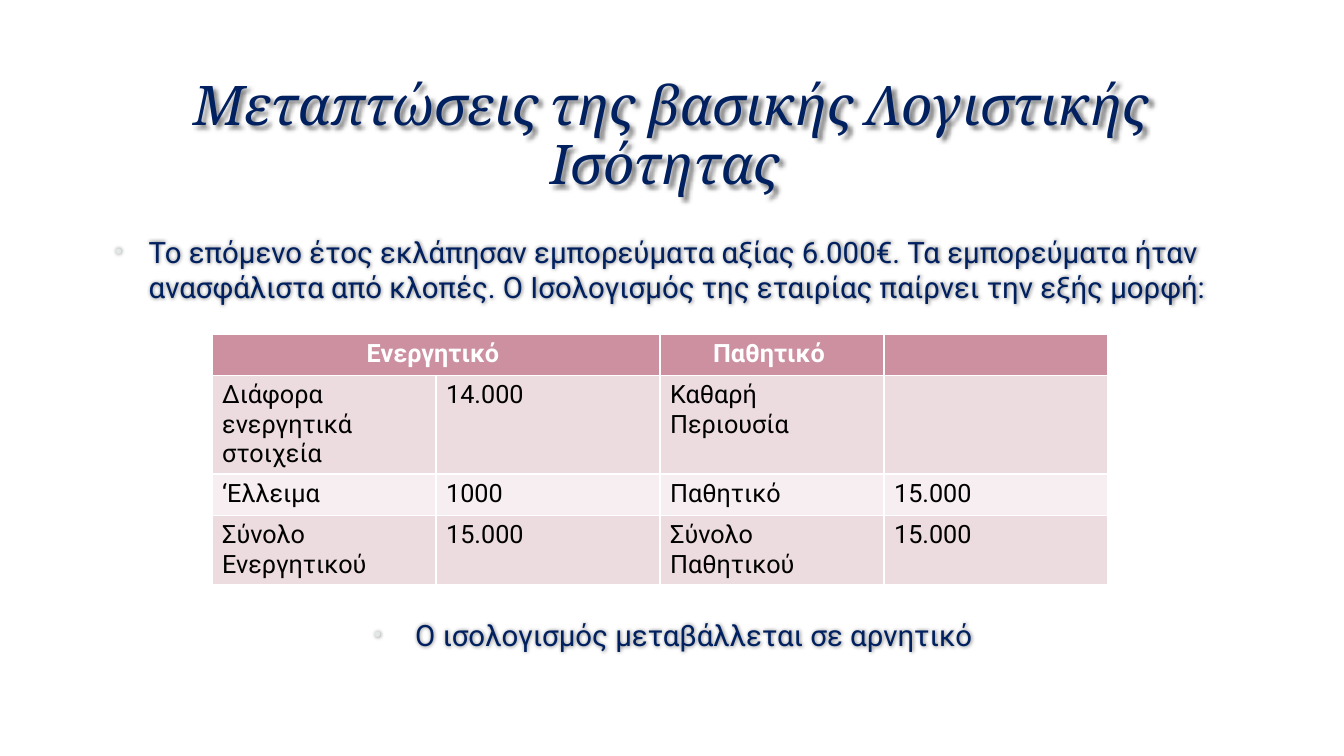
from lxml import etree
from pptx import Presentation
from pptx.dml.color import RGBColor
from pptx.enum.text import MSO_ANCHOR, MSO_AUTO_SIZE, PP_ALIGN
from pptx.oxml.ns import qn
from pptx.util import Pt

CENTER, LEFT = PP_ALIGN.CENTER, PP_ALIGN.LEFT
MIDDLE, TOP = MSO_ANCHOR.MIDDLE, MSO_ANCHOR.TOP
NO_AUTOFIT = MSO_AUTO_SIZE.NONE

COLORS = {
    "navy": "002060",
    "bullet": "E2E8E6",
    "header": "CC90A0",
    "band_dark": "ECDBDF",
    "band_light": "F6EEF0",
    "white": "FFFFFF",
    "black": "000000",
}
BODY_FONT, TITLE_FONT = "Roboto", "Cambria"

TITLE = "Μεταπτώσεις της βασικής Λογιστικής Ισότητας "
THEFT = (
    "Το επόμενο έτος εκλάπησαν εμπορεύματα αξίας 6.000€. "
    "Τα εμπορεύματα ήταν ανασφάλιστα από κλοπές. "
    "Ο Ισολογισμός της εταιρίας παίρνει την εξής μορφή:"
)
RESULT = " Ο ισολογισμός μεταβάλλεται σε αρνητικό"
BALANCE_SHEET = [
    ["Ενεργητικό ", "", "Παθητικό ", ""],
    ["Διάφορα ενεργητικά στοιχεία", "14.000", "Καθαρή Περιουσία", ""],
    ["‘Ελλειμα", "1000", "Παθητικό", "15.000"],
    ["Σύνολο Ενεργητικού", "15.000", "Σύνολο Παθητικού", "15.000"],
]


def place(shape, left, top, width, height):
    shape.left, shape.top = Pt(left), Pt(top)
    shape.width, shape.height = Pt(width), Pt(height)


def format_runs(paragraph, font, size, color, bold=False, italic=False):
    for run in paragraph.runs:
        run.font.name = font
        run.font.size = Pt(size)
        run.font.bold = bold
        run.font.italic = italic
        run.font.color.rgb = RGBColor.from_string(COLORS[color])


def add_soft_shadow(shape, blur, distance, opacity):
    """Shadow falling to the lower right; the shape has no fill, so its text casts it."""
    effects = etree.SubElement(shape._element.spPr, qn("a:effectLst"))
    shadow = etree.SubElement(
        effects, qn("a:outerShdw"), blurRad=str(Pt(blur)),
        dist=str(Pt(distance)), dir="2700000", algn="tl", rotWithShape="0")
    color = etree.SubElement(shadow, qn("a:srgbClr"), val=COLORS["black"])
    etree.SubElement(color, qn("a:alpha"), val=str(opacity * 1000))


def set_bullet(paragraph):
    properties = paragraph._p.get_or_add_pPr()
    properties.set("marL", str(Pt(27)))
    properties.set("indent", str(Pt(-24)))
    color = etree.SubElement(properties, qn("a:buClr"))
    etree.SubElement(color, qn("a:srgbClr"), val=COLORS["bullet"])
    etree.SubElement(properties, qn("a:buSzPct"), val="70000")
    etree.SubElement(properties, qn("a:buFont"), typeface="Arial")
    etree.SubElement(properties, qn("a:buChar"), char="•")


def fill_title(title):
    place(title, 72, 48, 815, 99.5)
    frame = title.text_frame
    frame.text = TITLE
    frame.auto_size = NO_AUTOFIT
    frame.vertical_anchor = MIDDLE
    paragraph = frame.paragraphs[0]
    paragraph.alignment = CENTER
    paragraph.line_spacing = 0.9
    format_runs(paragraph, TITLE_FONT, 39, "navy", italic=True)
    add_soft_shadow(title, blur=2, distance=3, opacity=50)


def fill_body(body):
    place(body, 72, 163.5, 815, 337.5)
    frame = body.text_frame
    frame.text = f"{THEFT}\n{RESULT}"
    frame.auto_size = NO_AUTOFIT
    frame.vertical_anchor = TOP
    # The second item stands below the table
    layout = [(LEFT, 4), (CENTER, 217)]
    for paragraph, (alignment, space_before) in zip(frame.paragraphs, layout):
        paragraph.alignment = alignment
        paragraph.line_spacing = 1.0
        paragraph.space_before = Pt(space_before)
        paragraph.space_after = Pt(6)
        set_bullet(paragraph)
        format_runs(paragraph, BODY_FONT, 21, "navy")
    add_soft_shadow(body, blur=3, distance=0.5, opacity=50)


def add_balance_sheet(slide):
    row_count, column_count = len(BALANCE_SHEET), len(BALANCE_SHEET[0])
    table = slide.shapes.add_table(
        row_count, column_count, Pt(151.5), Pt(238.5), Pt(640), Pt(118)).table
    for row_index, row in enumerate(BALANCE_SHEET):
        is_header = row_index == 0
        band = "band_dark" if row_index % 2 else "band_light"
        for column_index, text in enumerate(row):
            cell = table.cell(row_index, column_index)
            cell.fill.solid()
            cell.fill.fore_color.rgb = RGBColor.from_string(
                COLORS["header" if is_header else band])
            cell.text_frame.text = text
            paragraph = cell.text_frame.paragraphs[0]
            paragraph.alignment = CENTER if is_header else LEFT
            format_runs(paragraph, BODY_FONT, 18,
                        "white" if is_header else "black", bold=is_header)
    table.cell(0, 0).merge(table.cell(0, 1))


def main():
    presentation = Presentation()
    presentation.slide_width, presentation.slide_height = Pt(960), Pt(540)
    slide = presentation.slides.add_slide(presentation.slide_layouts[1])

    # Heading and list
    fill_title(slide.shapes.title)
    fill_body(slide.placeholders[1])

    # Balance sheet
    add_balance_sheet(slide)

    presentation.save("out.pptx")


if __name__ == "__main__":
    main()
